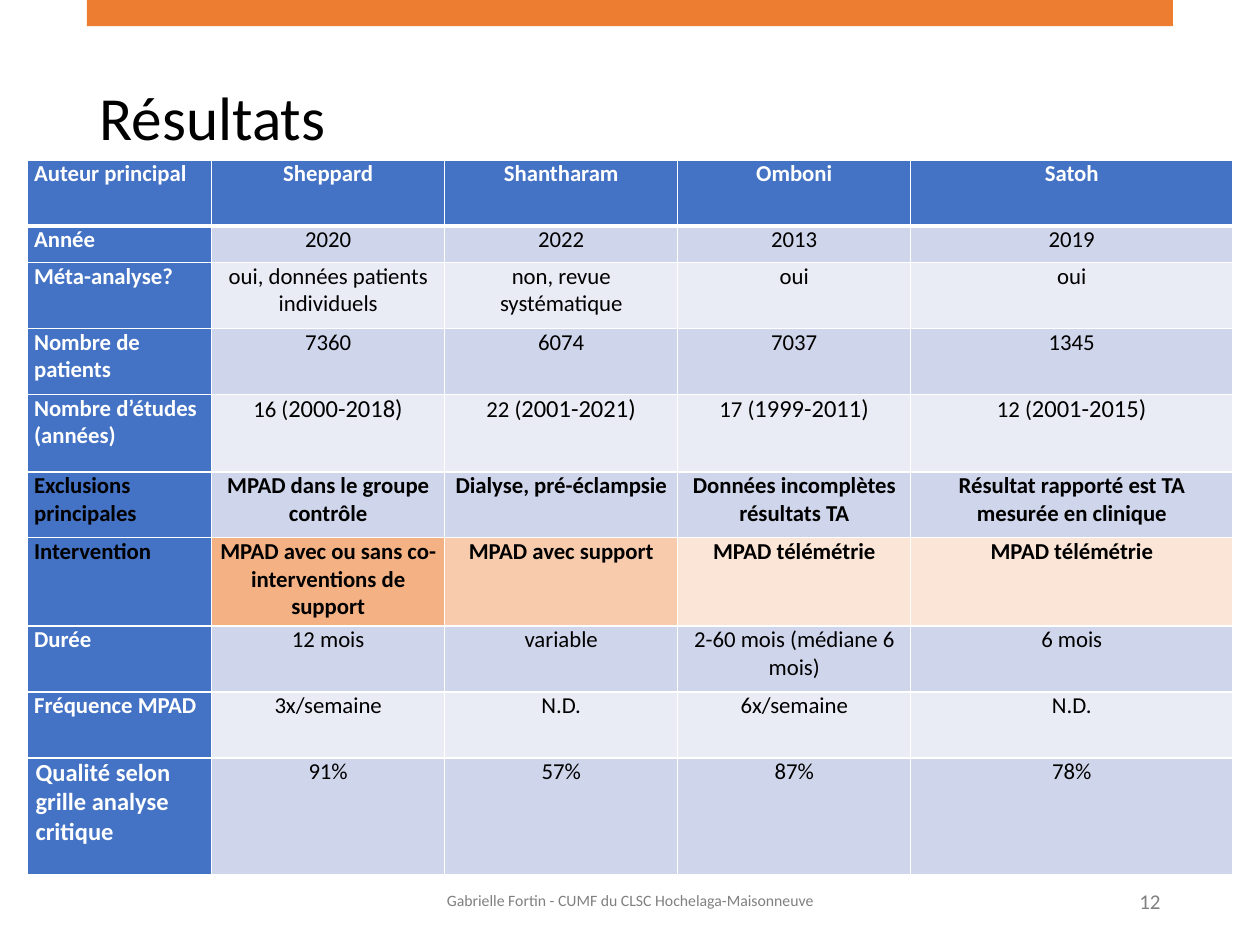
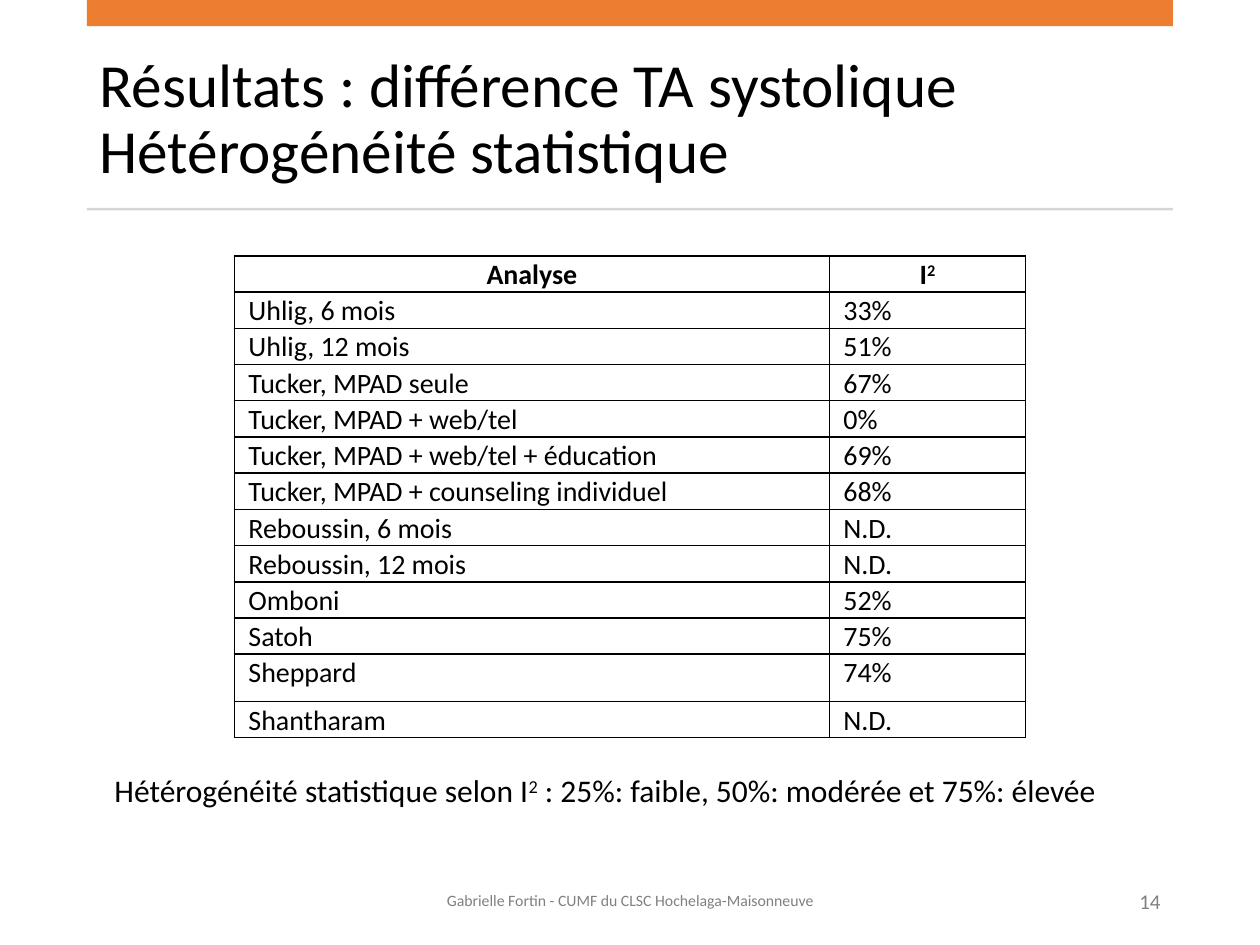
from lxml import etree
from pptx import Presentation
from pptx.dml.color import RGBColor
from pptx.enum.shapes import MSO_SHAPE
from pptx.enum.text import MSO_ANCHOR, MSO_AUTO_SIZE, PP_ALIGN
from pptx.oxml.ns import qn
from pptx.util import Pt

LEFT, CENTER, RIGHT = PP_ALIGN.LEFT, PP_ALIGN.CENTER, PP_ALIGN.RIGHT
MIDDLE, TOP = MSO_ANCHOR.MIDDLE, MSO_ANCHOR.TOP
NO_AUTOFIT = MSO_AUTO_SIZE.NONE
RECTANGLE = MSO_SHAPE.RECTANGLE

FONT = "Calibri"
BLACK, WHITE, GREY = "000000", "FFFFFF", "808080"
ORANGE, RULE_GREY = "ED7D31", "D5D5D5"
BLUE, BAND_DARK, BAND_LIGHT = "4472C4", "CFD5EA", "E9EBF5"
INTERVENTION_FILLS = ["F4B183", "F8CBAD", "FBE5D6", "FBE5D6"]

MARGIN = 49.7
CONTENT_WIDTH = 720 - 2 * MARGIN
FOOTER = "Gabrielle Fortin - CUMF du CLSC Hochelaga-Maisonneuve"

STUDIES_TITLE = "Résultats"
STUDIES = [
    ("Auteur principal", "Sheppard", "Shantharam", "Omboni", "Satoh"),
    ("Année", "2020", "2022", "2013", "2019"),
    ("Méta-analyse?", "oui, données patients individuels", "non, revue systématique", "oui", "oui"),
    ("Nombre de patients", "7360", "6074", "7037", "1345"),
    ("Nombre d’études (années)", ("16 (", "2000-2018)"), ("22 (", "2001-2021)"),
     ("17 (", "1999-2011)"), ("12 (", "2001-2015)")),
    ("Exclusions\nprincipales", "MPAD dans le groupe contrôle", "Dialyse, pré-éclampsie",
     "Données incomplètes résultats TA", "Résultat rapporté est TA mesurée en clinique"),
    ("Intervention", "MPAD avec ou sans co-interventions de support", "MPAD avec support",
     "MPAD télémétrie", "MPAD télémétrie"),
    ("Durée", "12 mois", "variable", "2-60 mois (médiane 6 mois)", "6 mois"),
    ("Fréquence MPAD", "3x/semaine", "N.D.", "6x/semaine", "N.D."),
    ("Qualité selon grille analyse critique", "91%", "57%", "87%", "78%"),
]
STUDY_WIDTHS = [105.6, 133.2, 133.2, 133.2, 184]
STUDY_HEIGHTS = [37.7, 20.9, 37.7, 37.7, 44.2, 37.7, 50.4, 37.7, 37.7, 67]
EXCLUSIONS_ROW, INTERVENTION_ROW = 5, 6
QUALITY_ROW = len(STUDIES) - 1

HETEROGENEITY_TITLE = "Résultats : différence TA systolique\vHétérogénéité statistique"
HETEROGENEITY = [
    ("Analyse", ("I", "2")),
    ("Uhlig, 6 mois", "33%"),
    ("Uhlig, 12 mois", "51%"),
    ("Tucker, MPAD seule", "67%"),
    ("Tucker, MPAD + web/tel", "0%"),
    ("Tucker, MPAD + web/tel + éducation", "69%"),
    ("Tucker, MPAD + counseling individuel", "68%"),
    ("Reboussin, 6 mois", "N.D."),
    ("Reboussin, 12 mois", "N.D."),
    ("Omboni", "52%"),
    ("Satoh", "75%"),
    ("Sheppard", "74%"),
    ("Shantharam", "N.D."),
]
HETEROGENEITY_WIDTHS = [340, 112]
HETEROGENEITY_HEIGHTS = [27 if row[0] == "Sheppard" else 20.7 for row in HETEROGENEITY]
CAPTION = ("Hétérogénéité statistique selon I", "2", " : 25%: faible, 50%: modérée et 75%: élevée")


def rgb(hex_color):
    return RGBColor.from_string(hex_color)


def write(text_frame, content, size, color=BLACK, bold=False, align=LEFT):
    pieces = (content,) if isinstance(content, str) else content
    text_frame.text = pieces[0]
    for piece in pieces[1:]:
        text_frame.paragraphs[0].add_run().text = piece
    for paragraph in text_frame.paragraphs:
        paragraph.alignment = align
        for run in paragraph.runs:
            run.font.name = FONT
            run.font.size = Pt(size)
            run.font.bold = bold
            run.font.color.rgb = rgb(color)
    return text_frame.paragraphs[0]


def raise_exponent(paragraph):
    paragraph.runs[1]._r.get_or_add_rPr().set("baseline", "30000")


def add_bar(slide, top, height, color):
    bar = slide.shapes.add_shape(RECTANGLE, Pt(MARGIN), Pt(top), Pt(CONTENT_WIDTH), Pt(height))
    bar.shadow.inherit = False
    bar.fill.solid()
    bar.fill.fore_color.rgb = rgb(color)
    bar.line.fill.background()


def add_text(slide, left, top, width, height, content, size, color=BLACK, align=LEFT, anchor=TOP):
    text_box = slide.shapes.add_textbox(Pt(left), Pt(top), Pt(width), Pt(height))
    text_box.text_frame.word_wrap = True
    text_box.text_frame.vertical_anchor = anchor
    return write(text_box.text_frame, content, size, color, align=align)


def add_page(presentation, title_text, number):
    slide = presentation.slides.add_slide(presentation.slide_layouts.get_by_name("Title Only"))
    title = slide.shapes.title
    title.left, title.top = Pt(MARGIN), Pt(26.6)
    title.width, title.height = Pt(CONTENT_WIDTH), Pt(85)
    title.text_frame.auto_size = NO_AUTOFIT
    title.text_frame.vertical_anchor = MIDDLE
    write(title.text_frame, title_text, 35).line_spacing = 0.9
    add_bar(slide, 0, 15, ORANGE)
    add_bar(slide, 118.8, 1.4, RULE_GREY)
    footer = add_text(slide, 238.5, 500.5, 243, 28.8, FOOTER, 9, GREY, CENTER, MIDDLE)
    footer.line_spacing = 0.9
    page_number = add_text(slide, 514.8, 500.5, 155.5, 28.8, str(number), 12, GREY, RIGHT, MIDDLE)
    footer.space_after = page_number.space_after = Pt(6)
    return slide


def add_grid(slide, left, top, widths, heights):
    frame = slide.shapes.add_table(len(heights), len(widths), Pt(left), Pt(top),
                                   Pt(sum(widths)), Pt(sum(heights)))
    table = frame.table
    table.first_row = table.horz_banding = False
    for column, width in zip(table.columns, widths):
        column.width = Pt(width)
    for row, height in zip(table.rows, heights):
        row.height = Pt(height)
    return table


def set_borders(cell, color, top=1, bottom=1):
    properties = cell._tc.get_or_add_tcPr()
    for side, width in (("L", 1), ("R", 1), ("T", top), ("B", bottom)):
        line = etree.SubElement(properties, qn(f"a:ln{side}"), w=str(Pt(width)))
        fill = etree.SubElement(line, qn("a:solidFill"))
        etree.SubElement(fill, qn("a:srgbClr"), val=color)


def set_margins(cell, side, top):
    cell.margin_left = cell.margin_right = Pt(side)
    cell.margin_top, cell.margin_bottom = Pt(top), Pt(0)


def study_fill(row, column):
    if row == 0 or column == 0:
        return BLUE
    if row == INTERVENTION_ROW:
        return INTERVENTION_FILLS[column - 1]
    return BAND_DARK if row % 2 else BAND_LIGHT


def add_studies(slide):
    table = add_grid(slide, 15.3, 91.5, STUDY_WIDTHS, STUDY_HEIGHTS)
    for row, values in enumerate(STUDIES):
        highlighted = row in (EXCLUSIONS_ROW, INTERVENTION_ROW)
        for column, content in enumerate(values):
            cell = table.cell(row, column)
            heading = row == 0 or column == 0
            set_margins(cell, 5 if row == QUALITY_ROW else 4.2, 0)
            set_borders(cell, WHITE, top=3 if row == 1 else 1, bottom=3 if row == 0 else 1)
            cell.fill.solid()
            cell.fill.fore_color.rgb = rgb(study_fill(row, column))
            paragraph = write(
                cell.text_frame, content,
                size=14 if row == QUALITY_ROW and column == 0 else 13,
                color=WHITE if heading and not highlighted else BLACK,
                bold=heading or highlighted,
                align=CENTER if column else LEFT)
            for years in paragraph.runs[1:]:
                years.font.size = Pt(14)


def add_heterogeneity(slide):
    table = add_grid(slide, 134, 146.2, HETEROGENEITY_WIDTHS, HETEROGENEITY_HEIGHTS)
    for row, values in enumerate(HETEROGENEITY):
        header = row == 0
        for column, content in enumerate(values):
            cell = table.cell(row, column)
            set_margins(cell, 8, 1.15)
            set_borders(cell, BLACK)
            cell.fill.background()
            write(cell.text_frame, content, 16, bold=header, align=CENTER if header else LEFT)
    raise_exponent(table.cell(0, 1).text_frame.paragraphs[0])
    raise_exponent(add_text(slide, 58.3, 437, 603.4, 29, CAPTION, 18))


def main():
    presentation = Presentation()
    presentation.slide_width, presentation.slide_height = Pt(720), Pt(540)
    add_studies(add_page(presentation, STUDIES_TITLE, 12))
    add_heterogeneity(add_page(presentation, HETEROGENEITY_TITLE, 14))
    presentation.save("out.pptx")


if __name__ == "__main__":
    main()
